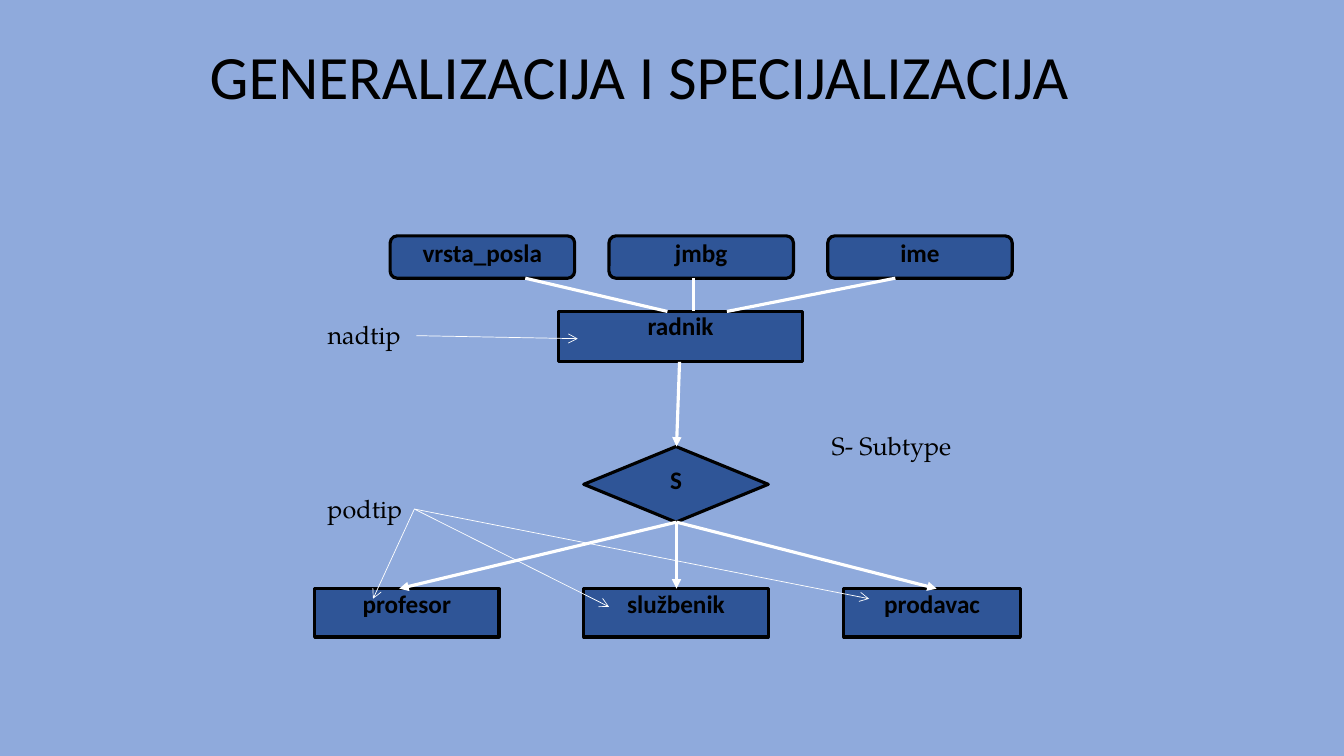
"""Build the slide on generalization and specialization."""
from dataclasses import dataclass

from lxml.etree import SubElement
from pptx import Presentation
from pptx.dml.color import RGBColor
from pptx.enum.shapes import MSO_CONNECTOR, MSO_SHAPE
from pptx.enum.text import MSO_ANCHOR, MSO_AUTO_SIZE, PP_ALIGN
from pptx.oxml.ns import qn
from pptx.util import Inches, Pt


@dataclass(frozen=True)
class Theme:
    back: RGBColor = RGBColor(0x8F, 0xAA, 0xDC)
    box: RGBColor = RGBColor(0x2F, 0x55, 0x97)
    ink: RGBColor = RGBColor(0, 0, 0)
    link: RGBColor = RGBColor(255, 255, 255)
    sans: str = "Calibri"
    serif: str = "TeX Gyre Pagella"
    head: Pt = Pt(44)
    body: Pt = Pt(18)
    thick: Pt = Pt(2.25)
    thin: Pt = Pt(0.5)


theme = Theme()


def write(frame, text, style, layout):
    """Fill a text frame and set its font and paragraph formats."""
    para = frame.paragraphs[0]
    run = para.add_run()
    run.text = text
    run.font.color.rgb = theme.ink
    for target, values in ((run.font, style), (para, layout)):
        for name, value in values.items():
            setattr(target, name, value)
    return para


def join(start, end, width, tip=None):
    """Draw a straight link, with an arrowhead at its end if asked."""
    line = slide.shapes.add_connector(
        MSO_CONNECTOR.STRAIGHT, *map(Inches, start + end))
    line.line.color.rgb = theme.link
    line.line.width = width
    props = line._element.spPr
    if tip:
        SubElement(props.find(qn("a:ln")), qn("a:tailEnd"), type=tip)
    SubElement(props, qn("a:effectLst"))


deck = Presentation()
deck.slide_width, deck.slide_height = Inches(13.33), Inches(7.5)
slide = deck.slides.add_slide(deck.slide_layouts[5])
slide.background.fill.solid()
slide.background.fill.fore_color.rgb = theme.back

title = slide.shapes.title
place = {"left": 1.98, "top": 0.16, "width": 9.45, "height": 1.25}
for name, value in place.items():
    setattr(title, name, Inches(value))
title.text_frame.vertical_anchor = MSO_ANCHOR.MIDDLE
write(title.text_frame, "GENERALIZACIJA I SPECIJALIZACIJA",
      {"name": theme.sans, "size": theme.head},
      {"alignment": PP_ALIGN.LEFT, "line_spacing": 0.9})

fields = ["vrsta_posla", "jmbg", "ime"]
boxes = [(MSO_SHAPE.ROUNDED_RECTANGLE, text, 3.87 + 2.17 * i, 2.34, 1.83, 0.42)
         for i, text in enumerate(fields)]
boxes += [
    (MSO_SHAPE.RECTANGLE, "radnik", 5.54, 3.09, 2.42, 0.5),
    (MSO_SHAPE.DIAMOND, "S", 5.79, 4.43, 1.83, 0.75),
    (MSO_SHAPE.RECTANGLE, "profesor", 3.12, 5.84, 1.83, 0.48),
    (MSO_SHAPE.RECTANGLE, "službenik", 5.79, 5.84, 1.83, 0.48),
    (MSO_SHAPE.RECTANGLE, "prodavac", 8.37, 5.84, 1.75, 0.48),
]
for kind, text, *area in boxes:
    box = slide.shapes.add_shape(kind, *map(Inches, area))
    box.shadow.inherit = False
    box.fill.solid()
    box.fill.fore_color.rgb = theme.box
    box.line.color.rgb = theme.ink
    box.line.width = theme.thick
    box.text_frame.vertical_anchor = MSO_ANCHOR.TOP
    box.text_frame.word_wrap = True
    para = write(box.text_frame, text,
                 {"name": theme.sans, "size": theme.body, "bold": True},
                 {"alignment": PP_ALIGN.CENTER, "line_spacing": 0.8})
    props = para._p.get_or_add_pPr()
    for name, value in {"marL": 0.38, "indent": -0.38}.items():
        props.set(name, str(Inches(value)))

for low, high in ((5.21, 6.62), (6.88, 6.88), (8.88, 7.21)):
    join((low, 2.76), (high, 3.09), theme.thick)
join((6.74, 3.59), (6.71, 4.43), theme.thick, "triangle")
for end in (3.96, 6.71, 9.29):
    join((6.71, 5.18), (end, 5.84), theme.thick, "triangle")

join((4.13, 3.33), (5.73, 3.36), theme.thin, "arrow")
for end in ((8.62, 5.94), (6.04, 6.02), (3.7, 5.94)):
    join((4.11, 5.05), end, theme.thin, "arrow")

labels = [("S- Subtype", 8.15, 4.22, 1.4), ("nadtip", 3.15, 3.12, 0.98),
          ("podtip", 3.15, 4.84, 0.96)]
for text, left, top, width in labels:
    note = slide.shapes.add_textbox(*map(Inches, (left, top, width, 0.4)))
    note.text_frame.word_wrap = False
    note.text_frame.auto_size = MSO_AUTO_SIZE.SHAPE_TO_FIT_TEXT
    write(note.text_frame, text, {"name": theme.serif, "size": theme.body},
          {"alignment": PP_ALIGN.LEFT})

deck.save("out.pptx")
